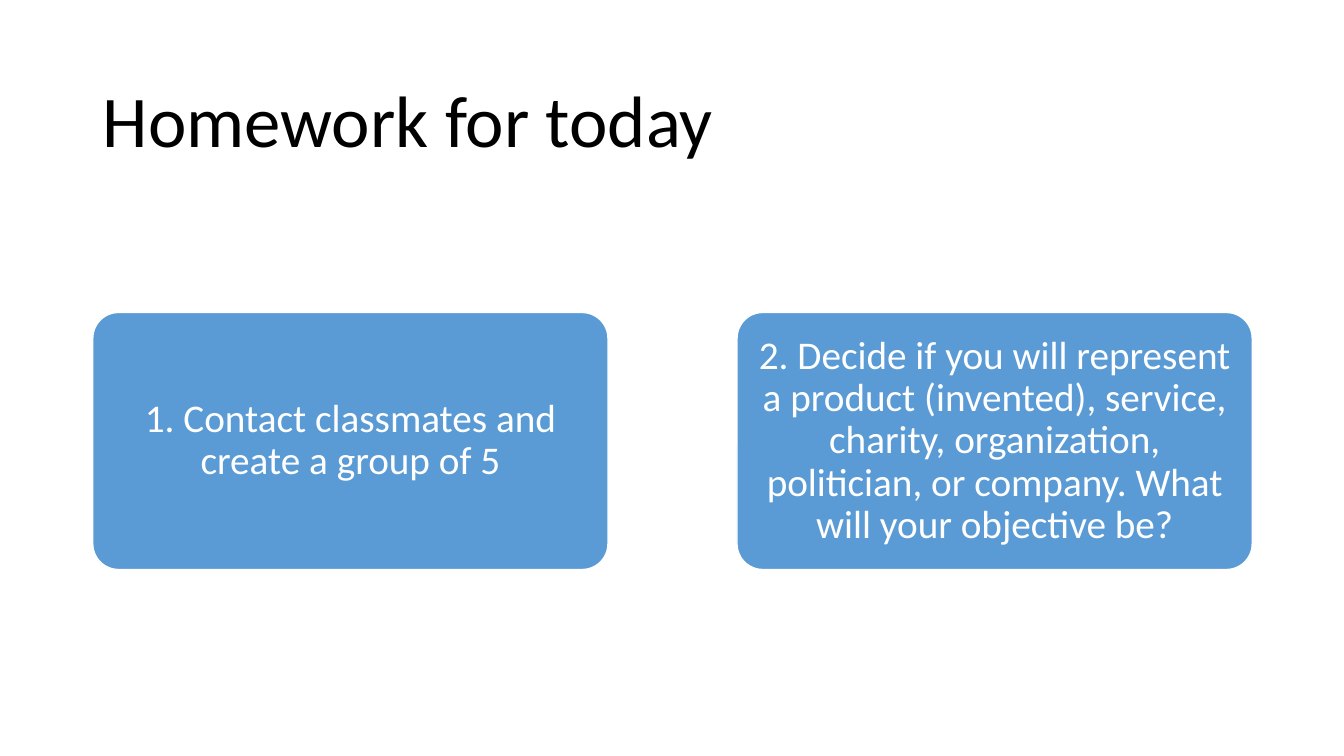
from pptx import Presentation
from pptx.dml.color import RGBColor
from pptx.enum.shapes import MSO_SHAPE
from pptx.enum.text import MSO_ANCHOR, PP_ALIGN
from pptx.util import Inches, Pt


def set_font(paragraph, size, color):
    paragraph.line_spacing = 0.9
    paragraph.font.name = "Calibri"
    paragraph.font.size = Pt(size)
    paragraph.font.color.rgb = RGBColor.from_string(color)


presentation = Presentation()
presentation.slide_width = Inches(13.33)
presentation.slide_height = Inches(7.5)
slide = presentation.slides.add_slide(presentation.slide_layouts[5])

title = slide.shapes.title
title.left, title.top = Inches(0.92), Inches(0.61)
title.width, title.height = Inches(11.5), Inches(1.24)
title.text_frame.text = "Homework for today"
title.text_frame.vertical_anchor = MSO_ANCHOR.MIDDLE
paragraph = title.text_frame.paragraphs[0]
paragraph.alignment = PP_ALIGN.LEFT
set_font(paragraph, 52, "000000")

tasks = [
    "1. Contact classmates and create a group of 5",
    "2. Decide if you will represent a product (invented), service, charity, "
    "organization, politician, or company. What will your objective be?",
]
for index, task in enumerate(tasks):
    card = slide.shapes.add_shape(
        MSO_SHAPE.ROUNDED_RECTANGLE,
        Inches(0.92 + 6.39 * index), Inches(3.1), Inches(5.11), Inches(2.55),
    )
    card.adjustments[0] = 0.1
    card.shadow.inherit = False
    card.fill.solid()
    card.fill.fore_color.rgb = RGBColor.from_string("5B9BD5")
    card.line.color.rgb = RGBColor.from_string("FFFFFF")
    card.line.width = Pt(1)
    text_frame = card.text_frame
    text_frame.word_wrap = True
    text_frame.vertical_anchor = MSO_ANCHOR.MIDDLE
    text_frame.margin_left = text_frame.margin_right = Inches(0.06)
    text_frame.margin_top = text_frame.margin_bottom = Inches(0.04)
    text_frame.text = task
    paragraph = text_frame.paragraphs[0]
    paragraph.alignment = PP_ALIGN.CENTER
    set_font(paragraph, 28, "FFFFFF")

presentation.save("out.pptx")
